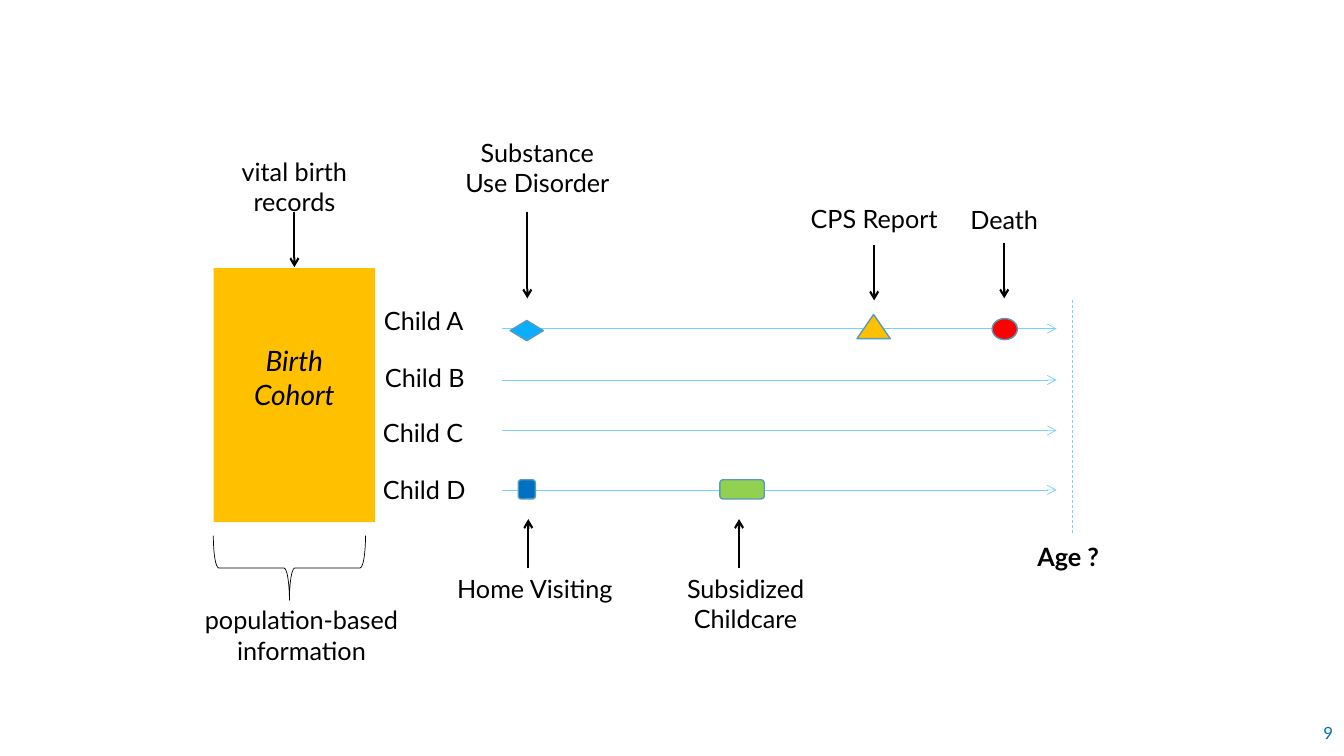
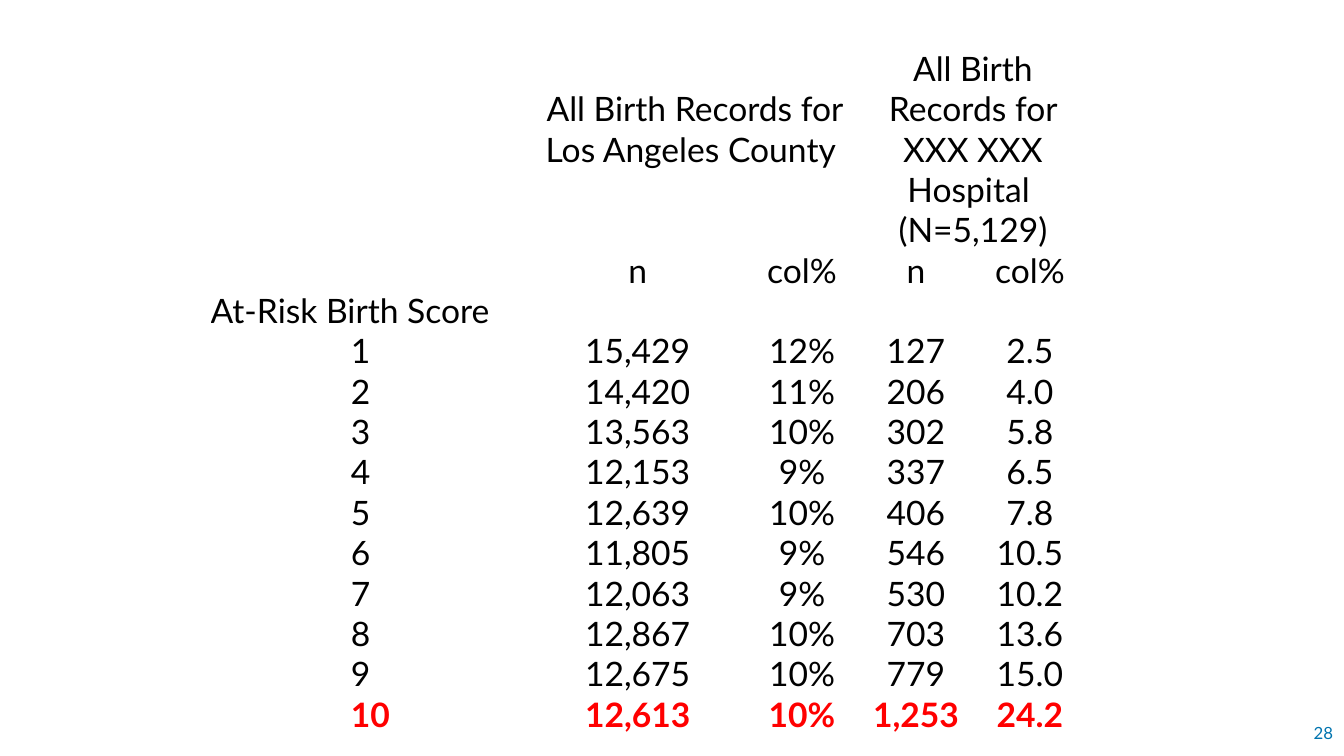
"""Build two slides: a birth cohort timeline and a table of risk scores."""
from lxml.etree import SubElement
from pptx import Presentation
from pptx.dml.color import RGBColor
from pptx.enum.dml import MSO_LINE_DASH_STYLE as Dash
from pptx.enum.shapes import MSO_CONNECTOR as Link, MSO_SHAPE as Geo
from pptx.enum.text import MSO_ANCHOR as Anchor, PP_ALIGN as Align
from pptx.oxml.ns import qn
from pptx.util import Inches, Pt

HUES = {"ink": "000000", "paper": "FFFFFF", "page": "0074AF", "gold": "FFC000",
        "track": "75D1FF", "edge": "579BBD", "red": "FF0000", "navy": "0070C0",
        "sky": "0BADFF", "green": "92D050"}
FACE = {"name": "Lato", "size": Pt(18), "bold": False, "italic": False}

NOTES = [
    ("vital birth records", 2.21, 1.5, 1.42, 0.71),
    ("population-based information", 1.53, 5.95, 2.92, 0.71),
    ("CPS Report", 7.79, 1.97, 1.76, 0.4),
    ("Death", 9.08, 1.98, 1.76, 0.4),
    ("Home Visiting", 4.28, 5.64, 2.05, 0.4),
    ("Substance Use Disorder", 4.45, 1.31, 1.76, 0.71),
    ("Subsidized Childcare", 6.37, 5.64, 2.05, 0.71),
]
KIDS = [("Child A", 3.71, 2.98, 3.26), ("Child B", 3.72, 3.55, 3.77),
        ("Child C", 3.7, 4.09, 4.27), ("Child D", 3.7, 4.66, 4.86)]
ARROWS = [(2.92, 2.1, 2.65), (8.67, 2.43, 2.98), (9.96, 2.41, 2.96),
          (5.24, 5.64, 5.15), (5.23, 2.1, 2.96), (7.33, 5.64, 5.15)]
MARKS = [
    (Geo.ISOSCELES_TRIANGLE, "gold", 8.5, 3.12, 0.33, 0.24),
    (Geo.OVAL, "red", 9.84, 3.16, 0.25, 0.21),
    (Geo.ROUNDED_RECTANGLE, "navy", 5.14, 4.76, 0.17, 0.19),
    (Geo.FLOWCHART_DECISION, "sky", 5.06, 3.18, 0.33, 0.2),
    (Geo.ROUNDED_RECTANGLE, "green", 7.14, 4.76, 0.44, 0.19),
]

COLS = [1.39, 1.39, 0.39, 2.13, 1.13, 1.13, 1.13]
HEADS = [
    (0, 3, 2, "All Birth Records for Los Angeles County "),
    (0, 5, 2, "All Birth Records for XXX XXX Hospital "),
    (1, 5, 2, "(N=5,129)"),
    (2, 3, 1, "n"), (2, 4, 1, "col%"), (2, 5, 1, "n"), (2, 6, 1, "col%"),
    (3, 0, 3, "At-Risk Birth Score"),
]
SCORES = [
    ("15,429", "12%", "127", "2.5"), ("14,420", "11%", "206", "4.0"),
    ("13,563", "10%", "302", "5.8"), ("12,153", "9%", "337", "6.5"),
    ("12,639", "10%", "406", "7.8"), ("11,805", "9%", "546", "10.5"),
    ("12,063", "9%", "530", "10.2"), ("12,867", "10%", "703", "13.6"),
    ("12,675", "10%", "779", "15.0"), ("12,613", "10%", "1,253", "24.2"),
]
TOP = 4


def hue(key):
    return RGBColor.from_string(HUES[key])


def write(frame, text, align=Align.CENTER, color="ink", **look):
    para = frame.paragraphs[0]
    para.alignment = align
    run = para.add_run()
    run.text = text
    for key, val in {**FACE, **look}.items():
        setattr(run.font, key, val)
    run.font.color.rgb = hue(color)


def label(slide, text, box, anchor=Anchor.TOP, **look):
    frame = slide.shapes.add_textbox(*map(Inches, box)).text_frame
    frame.word_wrap = True
    frame.vertical_anchor = anchor
    write(frame, text, **look)


def shape(slide, geo, box, fill=None, edge=None, width=1):
    item = slide.shapes.add_shape(geo, *map(Inches, box))
    item.shadow.inherit = False
    if fill:
        item.fill.solid()
        item.fill.fore_color.rgb = hue(fill)
    else:
        item.fill.background()
    if edge:
        item.line.color.rgb = hue(edge)
        item.line.width = Pt(width)
    else:
        item.line.fill.background()
    return item


def line(slide, ends, color, width, dash=None):
    item = slide.shapes.add_connector(Link.STRAIGHT, *map(Inches, ends))
    item.line.color.rgb = hue(color)
    item.line.width = Pt(width)
    props = item.element.spPr
    if dash:
        item.line.dash_style = dash
    else:
        SubElement(props.find(qn("a:ln")), qn("a:tailEnd"), type="arrow")
    SubElement(props, qn("a:effectLst"))


def page(deck, num):
    slide = deck.slides.add_slide(deck.slide_layouts[6])
    label(slide, num, (12.85, 7.07, 0.47, 0.4), Anchor.MIDDLE,
          align=Align.RIGHT, color="page", size=Pt(12))
    return slide


def cohort(slide):
    shape(slide, Geo.RIGHT_BRACE, (2.55, 4.88, 0.64, 1.51),
          edge="ink", width=0.5).rotation = 90
    frame = shape(slide, Geo.RECTANGLE, (2.12, 2.66, 1.6, 2.52), "gold").text_frame
    fit = {"word_wrap": True, "vertical_anchor": Anchor.TOP,
           "margin_top": Inches(0.75), "margin_left": Inches(0.3),
           "margin_right": Inches(0.3)}
    for key, val in fit.items():
        setattr(frame, key, val)
    write(frame, "Birth Cohort", size=Pt(20), italic=True)
    for name, left, top, y in KIDS:
        label(slide, name, (left, top, 1.17, 0.4), align=Align.LEFT)
        line(slide, (4.98, y, 10.48, y), "track", 0.5)
    line(slide, (10.64, 2.98, 10.64, 5.31), "track", 0.5, Dash.DASH)
    label(slide, "Age ?", (10.19, 5.32, 0.92, 0.4), align=Align.LEFT, bold=True)
    for text, *box in NOTES:
        label(slide, text, box)
    for x, start, end in ARROWS:
        line(slide, (x, start, x, end), "ink", 1.5)
    for geo, fill, *box in MARKS:
        shape(slide, geo, box, fill, "edge")


def scores(slide):
    rows = [1.6] + [0.4] * (TOP + len(SCORES) - 1)
    box = (2.09, 0.48, sum(COLS), sum(rows))
    grid = slide.shapes.add_table(len(rows), len(COLS), *map(Inches, box)).table
    grid.first_row = grid.horz_banding = False
    for col, width in zip(grid.columns, COLS):
        col.width = Inches(width)
    for row, height in zip(grid.rows, rows):
        row.height = Inches(height)
    for cell in grid.iter_cells():
        cell.fill.solid()
        cell.fill.fore_color.rgb = hue("paper")
        for side in ("left", "right", "top", "bottom"):
            setattr(cell, f"margin_{side}", 0)

    def put(row, col, text, **look):
        cell = grid.cell(row, col)
        left = col < 3
        cell.vertical_anchor = Anchor.BOTTOM if left else Anchor.MIDDLE
        write(cell.text_frame, text, Align.LEFT if left else Align.CENTER,
              size=Pt(24), **look)

    for row, col, span, text in HEADS:
        if span > 1:
            grid.cell(row, col).merge(grid.cell(row, col + span - 1))
        put(row, col, text)
    for num, vals in enumerate(SCORES, 1):
        last = num == len(SCORES)
        for col, text in zip((1, 3, 4, 5, 6), (str(num), *vals)):
            put(TOP + num - 1, col, text, bold=last, color="red" if last else "ink")


def main():
    deck = Presentation()
    deck.slide_width, deck.slide_height = Inches(13.33), Inches(7.5)
    cohort(page(deck, "9"))
    scores(page(deck, "28"))
    deck.save("out.pptx")


if __name__ == "__main__":
    main()
